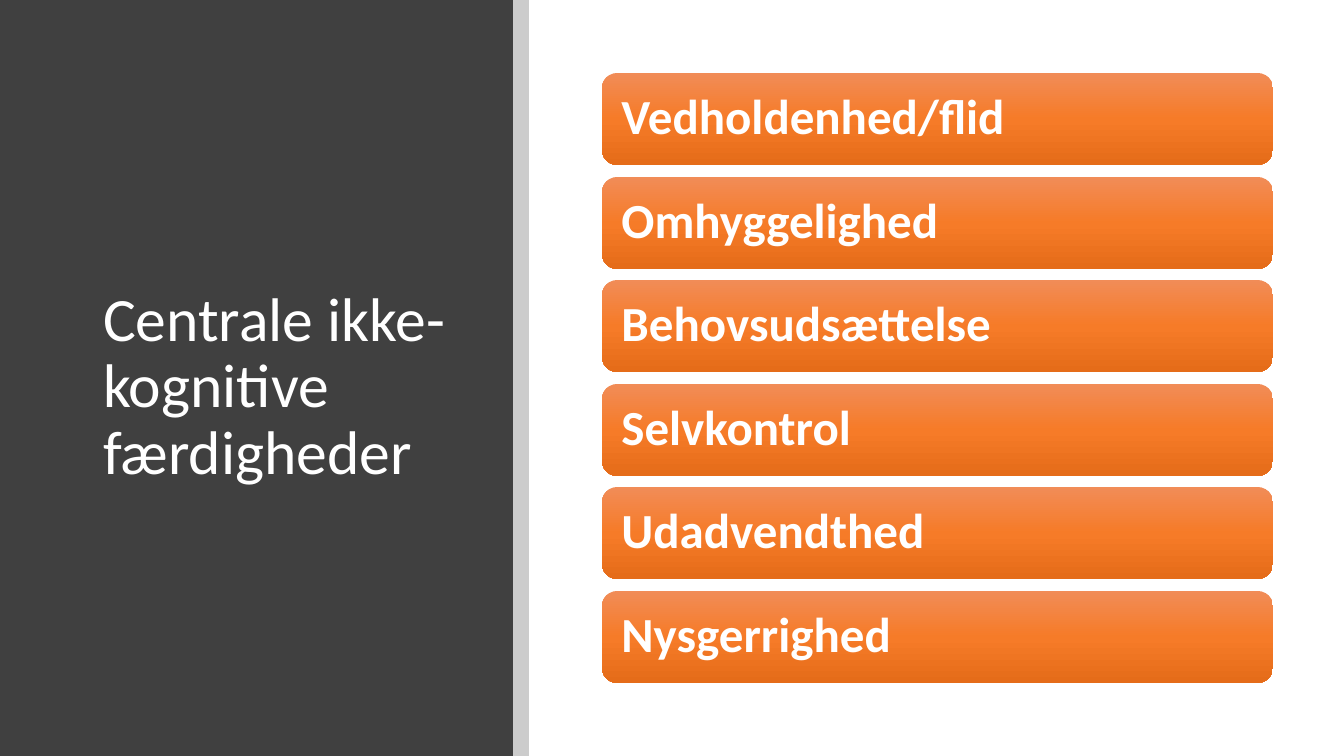
from copy import deepcopy
from dataclasses import dataclass

from pptx import Presentation
from pptx.dml.color import RGBColor
from pptx.enum.shapes import MSO_SHAPE
from pptx.enum.text import MSO_ANCHOR, MSO_AUTO_SIZE, PP_ALIGN
from pptx.oxml.ns import qn
from pptx.oxml.xmlchemy import OxmlElement
from pptx.util import Emu, Pt

RECTANGLE = MSO_SHAPE.RECTANGLE
ROUNDED = MSO_SHAPE.ROUNDED_RECTANGLE
MIDDLE = MSO_ANCHOR.MIDDLE
NO_AUTOFIT = MSO_AUTO_SIZE.NONE
LEFT = PP_ALIGN.LEFT

EMU_PER_PX = 914400 / 100.8
FONT = "Calibri"
TITLE_ONLY = 5
COLORS = {"panel": "404040", "strip": "000000", "text": "FFFFFF"}
BAR_GRADIENT = {0.0: "F18C57", 0.5: "F67B28", 1.0: "E56C19"}
STRIP_OPACITY = 20

TITLE = "Centrale ikke-kognitive færdigheder"
SKILLS = [
    "Vedholdenhed/flid",
    "Omhyggelighed",
    "Behovsudsættelse",
    "Selvkontrol",
    "Udadvendthed",
    "Nysgerrighed",
]
FIRST_BAR_TOP, LAST_BAR_TOP = 73, 591


@dataclass(frozen=True)
class Box:
    left: int
    top: int
    width: int
    height: int


def px(length: int) -> Emu:
    return Emu(round(length * EMU_PER_PX))


def place(shape, box: Box) -> None:
    shape.left, shape.top = px(box.left), px(box.top)
    shape.width, shape.height = px(box.width), px(box.height)


def add_block(slide, kind, box: Box):
    """Add a preset shape without outline or shadow."""
    block = slide.shapes.add_shape(kind, 0, 0, 0, 0)
    place(block, box)
    block.shadow.inherit = False
    block.line.fill.background()
    return block


def add_band(slide, box: Box, color: str):
    band = add_block(slide, RECTANGLE, box)
    band.fill.solid()
    band.fill.fore_color.rgb = RGBColor.from_string(color)
    return band


def set_opacity(shape, percent: int) -> None:
    alpha = OxmlElement("a:alpha")
    alpha.set("val", str(percent * 1000))
    shape.fill._xPr.find(qn("a:solidFill"))[0].append(alpha)


def fill_gradient(shape, colors: dict[float, str]) -> None:
    """Fill from top to bottom with three stops."""
    shape.fill.gradient()
    shape.fill.gradient_angle = 270
    stop_list = shape.fill._xPr.find(qn("a:gradFill")).find(qn("a:gsLst"))
    stop_list.append(deepcopy(stop_list[0]))
    for stop, (position, color) in zip(shape.fill.gradient_stops, colors.items()):
        stop.position = position
        stop.color.rgb = RGBColor.from_string(color)


def write(shape, wording: str, size: int, bold: bool) -> None:
    frame = shape.text_frame
    frame.text = wording
    frame.word_wrap = True
    frame.auto_size = NO_AUTOFIT
    frame.vertical_anchor = MIDDLE
    paragraph = frame.paragraphs[0]
    paragraph.alignment = LEFT
    paragraph.line_spacing = 0.9
    font = paragraph.runs[0].font
    font.name, font.size, font.bold = FONT, Pt(size), bold
    font.color.rgb = RGBColor.from_string(COLORS["text"])


def add_skill_bar(slide, skill: str, top: int) -> None:
    bar = add_block(slide, ROUNDED, Box(602, top, 671, 92))
    fill_gradient(bar, BAR_GRADIENT)
    write(bar, skill, 35, bold=True)
    frame = bar.text_frame
    frame.margin_left = frame.margin_right = px(15)
    frame.margin_top = frame.margin_bottom = px(15)


def main() -> None:
    deck = Presentation()
    deck.slide_width, deck.slide_height = px(1344), px(756)
    slide = deck.slides.add_slide(deck.slide_layouts[TITLE_ONLY])

    add_band(slide, Box(0, 0, 513, 756), COLORS["panel"])
    title = slide.shapes.title
    slide.shapes._spTree.append(title._element)  # bring in front of the panel
    place(title, Box(93, 90, 368, 596))
    write(title, TITLE, 44, bold=False)
    strip = add_band(slide, Box(513, 0, 16, 756), COLORS["strip"])
    set_opacity(strip, STRIP_OPACITY)

    pitch = (LAST_BAR_TOP - FIRST_BAR_TOP) / (len(SKILLS) - 1)
    for row, skill in enumerate(SKILLS):
        add_skill_bar(slide, skill, round(FIRST_BAR_TOP + row * pitch))

    deck.save("out.pptx")


if __name__ == "__main__":
    main()
